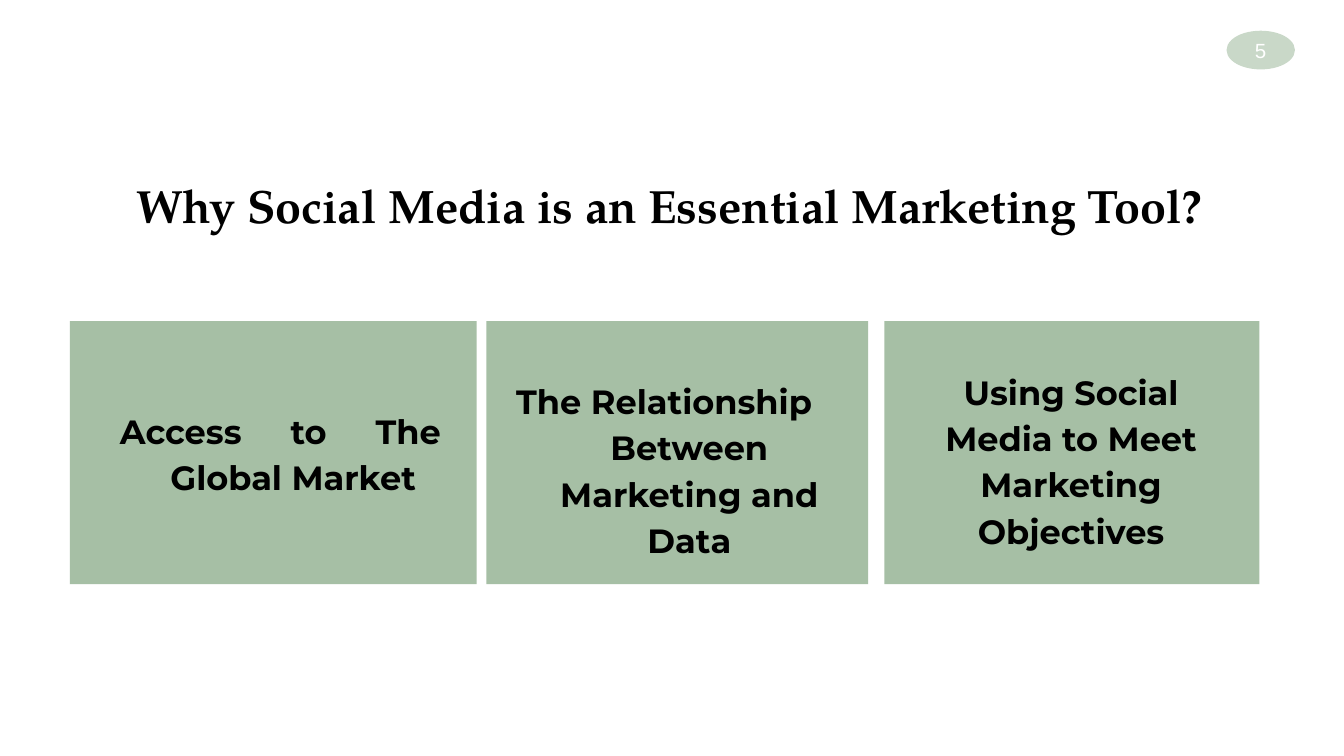
from pptx import Presentation
from pptx.dml.color import RGBColor
from pptx.enum.shapes import MSO_SHAPE as Shape
from pptx.enum.text import MSO_ANCHOR as Anchor, PP_ALIGN as Align
from pptx.util import Pt

TITLE = "Why Social Media is an Essential Marketing Tool?"
PAGE = "5"
GREEN, PALE = "A6BFA5", "C9D8C8"
CARD_TOP, CARD_HEIGHT = 172, 141
CARDS = [
    dict(text="Access to The Global Market", left=37.4, width=218,
         box=(48.2, 209.5, 195.1, 69.8), align=Align.JUSTIFY, indent=-27),
    dict(text="The Relationship Between Marketing and Data", left=260.6, width=204.5,
         box=(253.4, 193.7, 195.8, 120), align=Align.CENTER, indent=-27),
    dict(text="Using Social Media to Meet Marketing Objectives", left=473.8, width=200.9,
         box=(457.9, 188.6, 195.8, 120), align=Align.CENTER, indent=0),
]


def color(value):
    return RGBColor.from_string(value)


def add_block(kind, box, fill):
    sp = s.shapes.add_shape(kind, *map(Pt, box))
    sp.shadow.inherit = False
    sp.fill.solid()
    sp.fill.fore_color.rgb = color(fill)
    sp.line.fill.background()
    return sp


def write(sp, text, font, size, ink="000000", bold=False, align=Align.CENTER,
          anchor=Anchor.TOP, inset=7.2, spacing=1, margin=0, indent=0):
    tf = sp.text_frame
    tf.word_wrap = True
    tf.vertical_anchor = anchor
    tf.margin_left = tf.margin_right = tf.margin_top = tf.margin_bottom = Pt(inset)
    p = tf.paragraphs[0]
    p.alignment = align
    p.line_spacing = spacing
    pPr = p._p.get_or_add_pPr()
    pPr.set("marL", str(Pt(margin)))
    pPr.set("indent", str(Pt(indent)))
    r = p.add_run()
    r.text = text
    r.font.name, r.font.size, r.font.bold = font, Pt(size), bold
    r.font.color.rgb = color(ink)


def add_text(box, text, **fmt):
    write(s.shapes.add_textbox(*map(Pt, box)), text, **fmt)


prs = Presentation()
prs.slide_width, prs.slide_height = Pt(720), Pt(405)
s = prs.slides.add_slide(prs.slide_layouts[6])

add_text((45.4, 87.8, 626.4, 85), TITLE, font="TeX Gyre Pagella", size=25, bold=True)

for card in CARDS:
    add_block(Shape.RECTANGLE, (card["left"], CARD_TOP, card["width"], CARD_HEIGHT), GREEN)
    add_text(card["box"], card["text"], font="Montserrat", size=18, bold=True,
             align=card["align"], spacing=1.15, margin=36, indent=card["indent"])

badge = add_block(Shape.OVAL, (658.1, 17.5, 34.6, 18.7), PALE)
badge.line.color.rgb = color(PALE)
badge.line.width = Pt(2)
write(badge, PAGE, font="Arial", size=11, ink="FFFFFF", anchor=Anchor.MIDDLE, inset=0)

prs.save("out.pptx")
